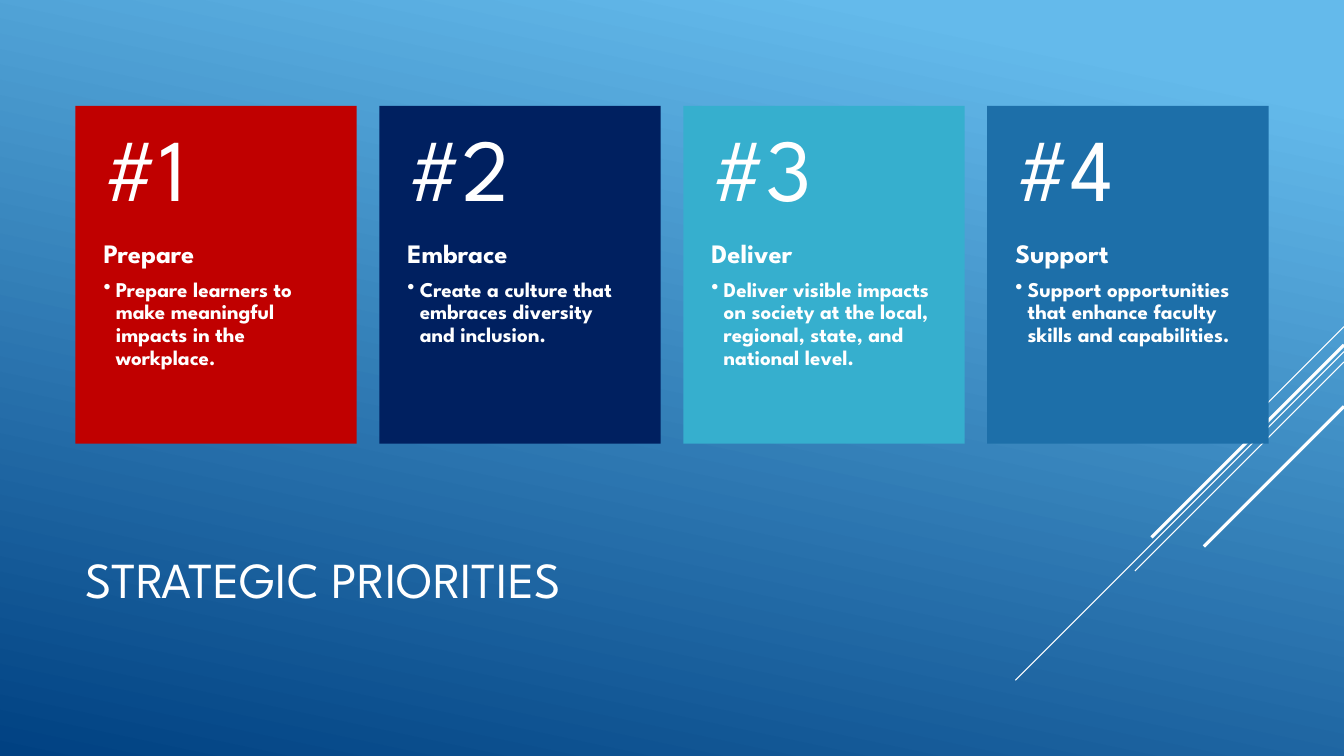
from lxml.etree import SubElement
from pptx import Presentation
from pptx.dml.color import RGBColor
from pptx.enum.shapes import MSO_CONNECTOR, MSO_SHAPE
from pptx.enum.text import MSO_ANCHOR
from pptx.oxml.ns import qn
from pptx.util import Cm, Pt

WHITE = RGBColor(0xFF, 0xFF, 0xFF)
SKY = RGBColor(0x64, 0xBA, 0xEB)
DEEP_BLUE = RGBColor(0x00, 0x41, 0x82)
RED = RGBColor(0xC0, 0x00, 0x00)
NAVY = RGBColor(0x00, 0x20, 0x60)
TURQUOISE = RGBColor(0x36, 0xAF, 0xCE)
BLUE = RGBColor(0x1D, 0x6F, 0xA9)
FONT = "League Spartan"

TITLE = "STRATEGIC PRIORITIES"
PRIORITIES = [
    ("Prepare", "Prepare learners to make meaningful impacts in the workplace.", RED),
    ("Embrace", "Create a culture that embraces diversity and inclusion.", NAVY),
    ("Deliver", "Deliver visible impacts on society at the local, regional, state, "
                "and national level.", TURQUOISE),
    ("Support", "Support opportunities that enhance faculty skills and capabilities.", BLUE),
]
# Diagonals at 45 degrees: height at the right edge, run (cm), width (pt)
DIAGONALS = [
    (8.23, 2.54, 0.75),
    (8.86, 8.28, 0.75),
    (9.12, 5.27, 0.75),
    (8.69, 4.85, 2.25),
    (10.24, 3.53, 2.25),
]

SLIDE_WIDTH, SLIDE_HEIGHT = 33.87, 19.05
CARD_LEFT, CARD_TOP, CARD_PITCH = 1.9, 2.67, 7.66
CARD_WIDTH, CARD_HEIGHT, NUMBER_HEIGHT = 7.09, 8.51, 3.4
SIDE_INSET = 0.71
BULLET_INDENT = 0.31

NUMBER_FRAME = {"vertical_anchor": MSO_ANCHOR.MIDDLE,
                "margin_left": Cm(SIDE_INSET), "margin_right": Cm(SIDE_INSET),
                "margin_top": Cm(0.46), "margin_bottom": Cm(0.46)}
BODY_FRAME = {"vertical_anchor": MSO_ANCHOR.TOP,
              "margin_left": Cm(SIDE_INSET), "margin_right": Cm(SIDE_INSET),
              "margin_top": 0, "margin_bottom": Cm(0.91)}
TITLE_FRAME = {"vertical_anchor": MSO_ANCHOR.MIDDLE}
CARD_SPACING = {"line_spacing": 0.9, "space_after": Pt(6.65)}
BULLET_SPACING = {"line_spacing": 0.9, "space_after": Pt(2.25)}


def set_attributes(target, values):
    for name, value in values.items():
        setattr(target, name, value)


def add_text_frame(slide, left, top, width, height, frame_format):
    box = slide.shapes.add_textbox(Cm(left), Cm(top), Cm(width), Cm(height))
    set_attributes(box.text_frame, {"word_wrap": True, **frame_format})
    return box.text_frame


def write(paragraph, text, size, bold=False, spacing=None):
    paragraph.text = text
    set_attributes(paragraph, spacing or {})
    set_attributes(paragraph.font, {"name": FONT, "size": Pt(size), "bold": bold})
    paragraph.font.color.rgb = WHITE


def add_bullet(paragraph):
    properties = paragraph._p.get_or_add_pPr()
    properties.set("marL", str(Cm(BULLET_INDENT)))
    properties.set("indent", str(-Cm(BULLET_INDENT)))
    SubElement(properties, qn("a:buChar")).set("char", "•")


def paint_background(slide):
    fill = slide.background.fill
    fill.gradient()
    fill.gradient_angle = 258
    for stop, position, color in zip(fill.gradient_stops, (0.1, 1), (SKY, DEEP_BLUE)):
        stop.position = position
        stop.color.rgb = color


def add_diagonal(slide, top, run, width):
    line = slide.shapes.add_connector(
        MSO_CONNECTOR.STRAIGHT, Cm(SLIDE_WIDTH), Cm(top),
        Cm(SLIDE_WIDTH - run), Cm(top + run))
    line.line.color.rgb = WHITE
    line.line.width = Pt(width)
    SubElement(line._element.spPr, qn("a:effectLst"))


def add_card(slide, index, heading, detail, color):
    left = CARD_LEFT + index * CARD_PITCH
    card = slide.shapes.add_shape(
        MSO_SHAPE.RECTANGLE, Cm(left), Cm(CARD_TOP), Cm(CARD_WIDTH), Cm(CARD_HEIGHT))
    card.shadow.inherit = False
    card.fill.solid()
    card.fill.fore_color.rgb = color
    card.line.fill.background()

    body = add_text_frame(slide, left, CARD_TOP + NUMBER_HEIGHT, CARD_WIDTH,
                          CARD_HEIGHT - NUMBER_HEIGHT, BODY_FRAME)
    write(body.paragraphs[0], heading, 19, True, CARD_SPACING)
    bullet = body.add_paragraph()
    add_bullet(bullet)
    write(bullet, detail, 15, True, BULLET_SPACING)

    number = add_text_frame(slide, left, CARD_TOP, CARD_WIDTH, NUMBER_HEIGHT, NUMBER_FRAME)
    write(number.paragraphs[0], f"#{index + 1}", 63, spacing=CARD_SPACING)


def main():
    presentation = Presentation()
    presentation.slide_width = Cm(SLIDE_WIDTH)
    presentation.slide_height = Cm(SLIDE_HEIGHT)
    slide = presentation.slides.add_slide(presentation.slide_layouts[6])
    paint_background(slide)
    for diagonal in DIAGONALS:
        add_diagonal(slide, *diagonal)
    title = add_text_frame(slide, CARD_LEFT, 12.47, 23.7, 4.19, TITLE_FRAME)
    write(title.paragraphs[0], TITLE, 36)
    for index, priority in enumerate(PRIORITIES):
        add_card(slide, index, *priority)
    presentation.save("out.pptx")


if __name__ == "__main__":
    main()
